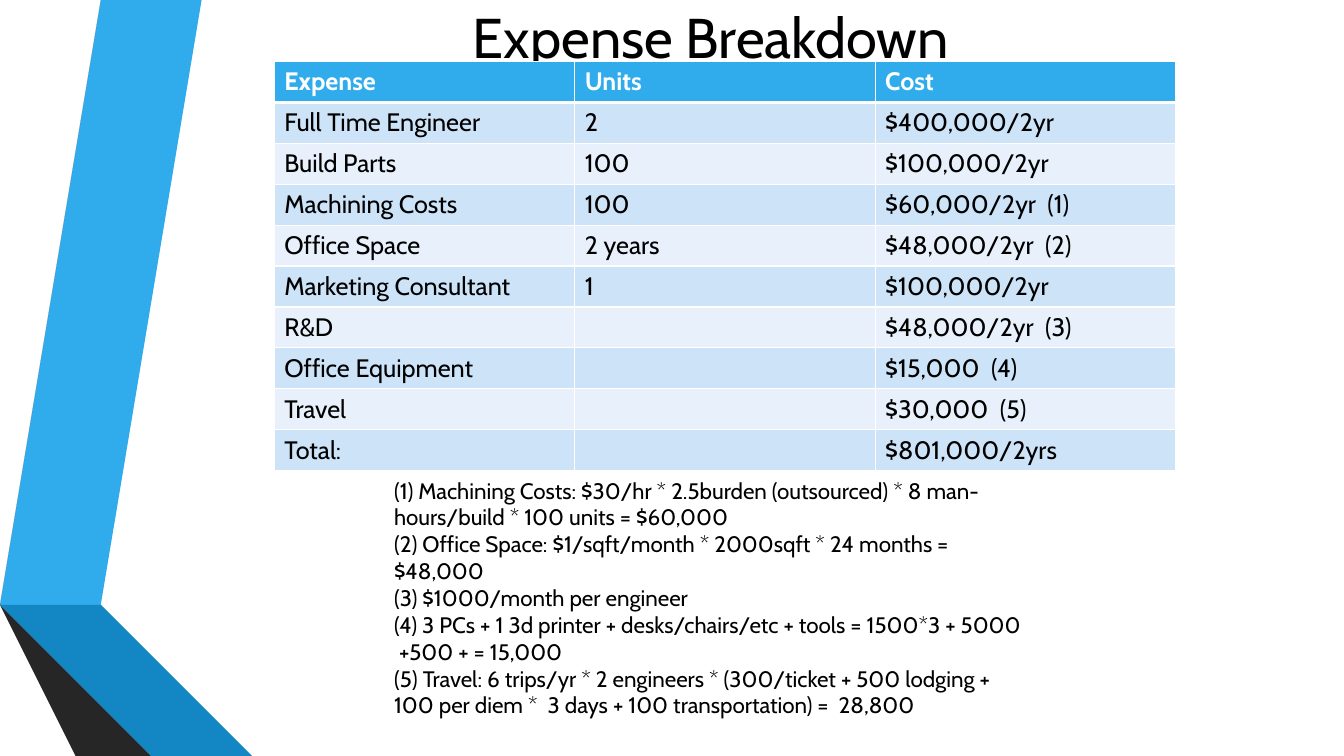
from lxml import etree
from pptx import Presentation
from pptx import util as u
from pptx.dml.color import RGBColor
from pptx.enum import text
from pptx.oxml import ns

WIDTH, HEIGHT = 13.33, 7.5
FONT = "Cabin"
BLACK, WHITE, BLUE = "000000", "FFFFFF", "30ACEC"
STRIPES = ["CDE3F8", "E8F1FB"]

TITLE = "Expense Breakdown"
EXPENSES = [
    ("Expense", "Units", "Cost"),
    ("Full Time Engineer", "2", "$400,000/2yr"),
    ("Build Parts", "100", "$100,000/2yr"),
    ("Machining Costs", "100", "$60,000/2yr  (1)"),
    ("Office Space", "2 years", "$48,000/2yr  (2)"),
    ("Marketing Consultant", "1", "$100,000/2yr"),
    ("R&D", "", "$48,000/2yr  (3)"),
    ("Office Equipment", "", "$15,000  (4)"),
    ("Travel", "", "$30,000  (5)"),
    ("Total:", "", "$801,000/2yrs"),
]
NOTES = [
    "(1) Machining Costs: $30/hr * 2.5burden (outsourced) * 8 man-hours/build * 100 units = $60,000",
    "(2) Office Space: $1/sqft/month * 2000sqft * 24 months = $48,000",
    "(3) $1000/month per engineer",
    "(4) 3 PCs + 1 3d printer + desks/chairs/etc + tools = 1500*3 + 5000  +500 + = 15,000",
    "(5) Travel: 6 trips/yr * 2 engineers * (300/ticket + 500 lodging + 100 per diem *  3 days"
    " + 100 transportation) =  28,800",
]
RIBBONS = [
    (BLUE, [(0.5, 5.78), (0.77, 5.83), (1.73, 0), (1.45, 0)]),
    ("595959", [(1.39, 0), (1.11, 0), (0.16, 5.73), (0.44, 5.77)]),
    ("262626", [(0.16, 5.73), (1.45, HEIGHT), (1.51, HEIGHT)]),
    ("0C5A82", [(0.5, 5.79), (2.08, HEIGHT), (2.14, HEIGHT)]),
    ("1287C3", [(0.5, 5.78), (2.14, HEIGHT), (2.83, HEIGHT), (0.77, 5.83)]),
    ("404040", [(2.02, HEIGHT), (0.48, 5.83), (0.44, 5.77), (0.16, 5.73), (1.51, HEIGHT)]),
]
TITLE_BOX = (1.57, -0.3, 10.96, 1.92)
TABLE_LEFT, TABLE_TOP, COLUMN, ROW = 2.72, 0.61, 2.98, 0.406
NOTES_BOX = (3.81, 4.68, 6.46, 2.26)


def color(value):
    return RGBColor.from_string(value)


def inches(values):
    return [u.Inches(value) for value in values]


def style(para, size, value=BLACK, bold=False):
    para.font.name, para.font.size, para.font.bold = FONT, u.Pt(size), bold
    para.font.color.rgb = color(value)


def add_ribbon(page, value, points):
    builder = page.shapes.build_freeform(*points[0], scale=u.Inches(1))
    builder.add_line_segments(points[1:], close=True)
    ribbon = builder.convert_to_shape()
    ribbon.shadow.inherit = False
    ribbon.fill.solid()
    ribbon.fill.fore_color.rgb = color(value)
    ribbon.line.fill.background()


def add_borders(cell, widths):
    properties = cell._tc.get_or_add_tcPr()
    for side, width in widths.items():
        line = etree.SubElement(properties, ns.qn(f"a:ln{side}"), w=str(u.Pt(width)))
        fill = etree.SubElement(line, ns.qn("a:solidFill"))
        etree.SubElement(fill, ns.qn("a:srgbClr"), val=WHITE)


def add_expenses(page):
    rows, columns = len(EXPENSES), len(EXPENSES[0])
    place = inches((TABLE_LEFT, TABLE_TOP, columns * COLUMN, rows * ROW))
    table = page.shapes.add_table(rows, columns, *place).table
    for r, values in enumerate(EXPENSES):
        header = r == 0
        for c, value in enumerate(values):
            cell = table.cell(r, c)
            cell.text = value
            style(cell.text_frame.paragraphs[0], 18, WHITE if header else BLACK, header)
            add_borders(cell, {"L": 1, "R": 1, "T": 3 if r == 1 else 1, "B": 3 if header else 1})
            cell.fill.solid()
            cell.fill.fore_color.rgb = color(BLUE if header else STRIPES[(r - 1) % 2])


def add_title(page):
    title = page.shapes.title
    title.left, title.top, title.width, title.height = inches(TITLE_BOX)
    frame = title.text_frame
    frame.text = TITLE
    frame.vertical_anchor = text.MSO_ANCHOR.MIDDLE
    frame.margin_bottom = u.Inches(0.65)
    para = frame.paragraphs[0]
    para.alignment = text.PP_ALIGN.CENTER
    style(para, 40)


def add_notes(page):
    frame = page.shapes.add_textbox(*inches(NOTES_BOX)).text_frame
    frame.word_wrap = True
    frame.text = "\n".join(NOTES)
    for para in frame.paragraphs:
        style(para, 16)


def main():
    """Build the expense breakdown slide."""
    deck = Presentation()
    deck.slide_width, deck.slide_height = inches((WIDTH, HEIGHT))
    page = deck.slides.add_slide(deck.slide_layouts[5])
    for value, points in RIBBONS:
        add_ribbon(page, value, points)
    add_title(page)
    add_expenses(page)
    add_notes(page)
    deck.save("out.pptx")


if __name__ == "__main__":
    main()
